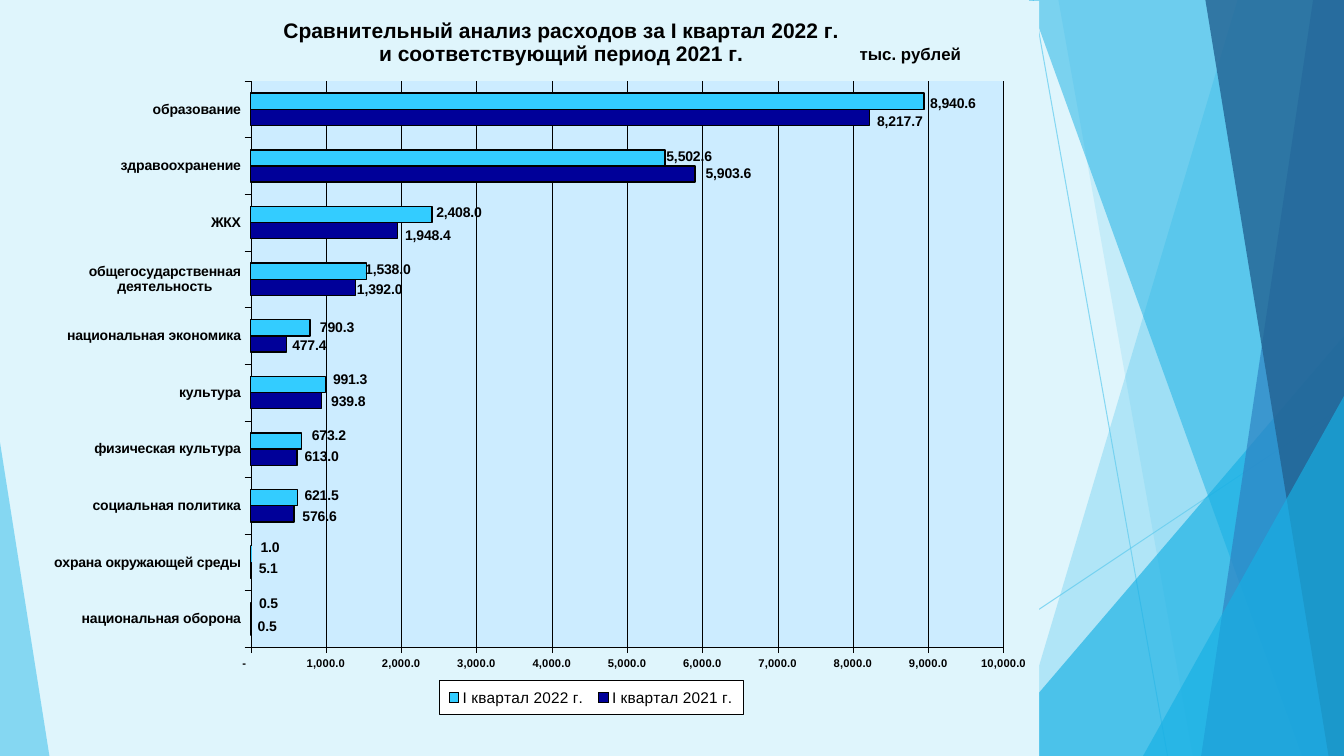
from lxml import etree
from pptx import Presentation
from pptx.chart.data import CategoryChartData
from pptx.dml.color import RGBColor as RGB
from pptx.enum.chart import XL_CHART_TYPE as ChartType, XL_LABEL_POSITION as LabelPos
from pptx.enum.chart import XL_LEGEND_POSITION as LegendPos, XL_TICK_MARK as Tick
from pptx.enum.shapes import MSO_CONNECTOR as Connector, MSO_SHAPE as Shape
from pptx.oxml import parse_xml
from pptx.oxml.ns import nsdecls, qn
from pptx.util import Pt

THEME = dict(font="Arial", page="DFF5FC", plot="CCECFF", ink="000000", white="FFFFFF",
             sky="5FCBEF", azure="17B0E4", blue="2E83C3", deep="226292",
             q2021="000099", q2022="33CCFF",
             title=15, unit=12, legend=11, label=10, tick=8)
AMOUNT = '_(* #,##0.0_);_(* \\(#,##0.0\\);_(* "-"??_);_(@_)'
CHART_WIDTH, CHART_HEIGHT = 704.9, 540


def arrange(owner, index, x, y, size=None, target="", edge=True):
    old = owner.find(qn("c:layout"))
    if old is not None:
        owner.remove(old)
    fields = [("layoutTarget", target)] if target else []
    fields += [("xMode", "edge"), ("yMode", "edge")] if edge else []
    fields += [("x", x), ("y", y)]
    fields += zip("wh", size) if size else []
    body = "".join(f'<c:{name} val="{value}"/>' for name, value in fields)
    owner.insert(index, parse_xml(
        f'<c:layout {nsdecls("c")}><c:manualLayout>{body}</c:manualLayout></c:layout>'))


def paint(owner, fill, border=None):
    edge = f'<a:solidFill><a:srgbClr val="{border}"/></a:solidFill>' if border else "<a:noFill/>"
    style = parse_xml(f'<c:spPr {nsdecls("c", "a")}><a:solidFill><a:srgbClr val="{fill}"/>'
                      f'</a:solidFill><a:ln w="3175">{edge}</a:ln></c:spPr>')
    text_style = owner.find(qn("c:txPr"))
    if text_style is None:
        owner.append(style)
    else:
        text_style.addprevious(style)


prs = Presentation()
prs.slide_width, prs.slide_height = Pt(960), Pt(540)
slide = prs.slides.add_slide(prs.slide_layouts[6])
slide.background.fill.solid()
slide.background.fill.fore_color.rgb = RGB.from_string(THEME["page"])

translucent = []
for x1, y1, x2, y2 in [(738, 0, 834, 540), (960, 290, 585, 540)]:
    ray = slide.shapes.add_connector(Connector.STRAIGHT, Pt(x1), Pt(y1), Pt(x2), Pt(y2))
    ray.line.color.rgb = RGB.from_string(THEME["sky"])
    ray.line.width = Pt(0.75)
    etree.SubElement(ray._element.spPr, qn("a:effectLst"))
    translucent.append((ray, 70))

facets = [
    ("sheet", (884, 723), "sky", 36),
    ("sheet", (756, 852), "sky", 20),
    ("corner", (703.5, 240, 256.5, 300, 1), "azure", 66),
    ("sheet", (735, 929.5), "azure", 50),
    ("sheet", (938, 858), "blue", 70),
    ("sheet", (861, 949), "deep", 80),
    ("corner", (816.5, 283, 143.5, 257, 1), "azure", 66),
    ("corner", (0, 316, 35.3, 224, 0), "sky", 70),
]
for kind, geometry, colour, opacity in facets:
    if kind == "sheet":
        top_x, bottom_x = geometry
        outline = slide.shapes.build_freeform(top_x, 0, Pt(1))
        outline.add_line_segments([(960, 0), (960, 540), (bottom_x, 540)], close=True)
        facet = outline.convert_to_shape()
    else:
        *box, apex = geometry
        facet = slide.shapes.add_shape(Shape.ISOSCELES_TRIANGLE, *map(Pt, box))
        facet.adjustments[0] = apex
    facet.fill.solid()
    facet.fill.fore_color.rgb = RGB.from_string(THEME[colour])
    facet.line.fill.background()
    facet.shadow.inherit = False
    translucent.append((facet, opacity))

for decoration, opacity in translucent:
    for tint in decoration._element.spPr.iter(qn("a:srgbClr")):
        etree.SubElement(tint, qn("a:alpha")).set("val", str(opacity * 1000))

spending = [
    ("национальная оборона", 0.5, 0.5, (-0.5, -0.5), (0.5, -5)),
    ("охрана окружающей среды", 5.1, 1.0, (0, -1), (1.5, -4.5)),
    ("социальная политика", 576.6, 621.5, (0.5, 2), (-0.5, -1.5)),
    ("физическая культура", 613.0, 673.2, (0, 0), (2, -4)),
    ("культура", 939.8, 991.3, (1.5, 1), (0, -3)),
    ("национальная экономика", 477.4, 790.3, (-1.5, 1), (1.5, 0)),
    ("общегосударственная деятельность", 1392.0, 1538.0, (-4.5, 2), (-6.5, -1)),
    ("ЖКХ", 1948.4, 2408.0, (0, 3.5), (-2.5, -1)),
    ("здравоохранение", 5903.6, 5502.6, (2, 0), (-4.5, -1)),
    ("образование", 8217.7, 8940.6, (0, 3), (-1, 1.5)),
]
areas, spent_2021, spent_2022, nudges_2021, nudges_2022 = zip(*spending)
figures = CategoryChartData(number_format=AMOUNT)
figures.categories = areas
figures.add_series("I квартал 2021 г.", spent_2021)
figures.add_series("I квартал 2022 г.", spent_2022)
chart = slide.shapes.add_chart(ChartType.BAR_CLUSTERED, Pt(37.4), Pt(0.7),
                               Pt(CHART_WIDTH), Pt(CHART_HEIGHT), figures).chart
black = RGB.from_string(THEME["ink"])
chart.font.name, chart.font.size = THEME["font"], Pt(12)
chart.font.color.rgb = black
paint(chart._chartSpace, THEME["page"])
plot_area = chart._chartSpace.chart.plotArea
arrange(plot_area, 0, 0.201, 0.106, (0.763, 0.749), "inner")
paint(plot_area, THEME["plot"])

bars = chart.plots[0]
bars.gap_width, bars.overlap = 150, 0
bars.vary_by_categories = False
for series, colour, nudges in zip(bars.series, ("q2021", "q2022"), (nudges_2021, nudges_2022)):
    series.format.fill.solid()
    series.format.fill.fore_color.rgb = RGB.from_string(THEME[colour])
    series.format.line.color.rgb = black
    series.format.line.width = Pt(1)
    series.invert_if_negative = False
    for index, (dx, dy) in enumerate(nudges):
        amount = series.points[index].data_label
        amount.font.name, amount.font.size = THEME["font"], Pt(THEME["label"])
        amount.font.bold, amount.font.color.rgb = True, black
        amount.position = LabelPos.OUTSIDE_END
        arrange(amount._get_or_add_dLbl(), 1, round(dx / CHART_WIDTH, 4),
                round(dy / CHART_HEIGHT, 4), edge=False)

areas_axis, money_axis = chart.category_axis, chart.value_axis
for axis, size in ((areas_axis, "label"), (money_axis, "tick")):
    axis.major_tick_mark, axis.minor_tick_mark = Tick.OUTSIDE, Tick.NONE
    axis.format.line.color.rgb, axis.format.line.width = black, Pt(0.25)
    tick_font = axis.tick_labels.font
    tick_font.name, tick_font.size, tick_font.bold = THEME["font"], Pt(THEME[size]), True
    tick_font.color.rgb = black
areas_axis.has_major_gridlines = False
money_axis.minimum_scale, money_axis.maximum_scale, money_axis.major_unit = 0, 10000, 1000
money_axis.tick_labels.number_format = AMOUNT
money_axis.tick_labels.number_format_is_linked = False
money_axis.has_major_gridlines = True
money_axis.major_gridlines.format.line.color.rgb = black
money_axis.major_gridlines.format.line.width = Pt(0.25)

headings = [
    (chart.chart_title, "title", 0.231, 0.018,
     ["Сравнительный анализ расходов за I квартал 2022 г.", "и соответствующий период 2021 г."]),
    (money_axis.axis_title, "unit", 0.815, 0.052, ["тыс. рублей"]),
]
for heading, size, x, y, lines in headings:
    frame = heading.text_frame
    for number, line in enumerate(lines):
        paragraph = frame.add_paragraph() if number else frame.paragraphs[0]
        run = paragraph.add_run()
        run.text = line
        run.font.name, run.font.size, run.font.bold = THEME["font"], Pt(THEME[size]), True
        run.font.color.rgb = black
    arrange(heading._element, 1, x, y)

chart.has_legend = True
legend = chart.legend
legend.position, legend.include_in_layout = LegendPos.RIGHT, False
legend.font.name, legend.font.size = THEME["font"], Pt(THEME["legend"])
legend.font.color.rgb = black
arrange(legend._element, 1, 0.392, 0.899, (0.308, 0.045))
paint(legend._element, THEME["white"], THEME["ink"])

prs.save("out.pptx")
